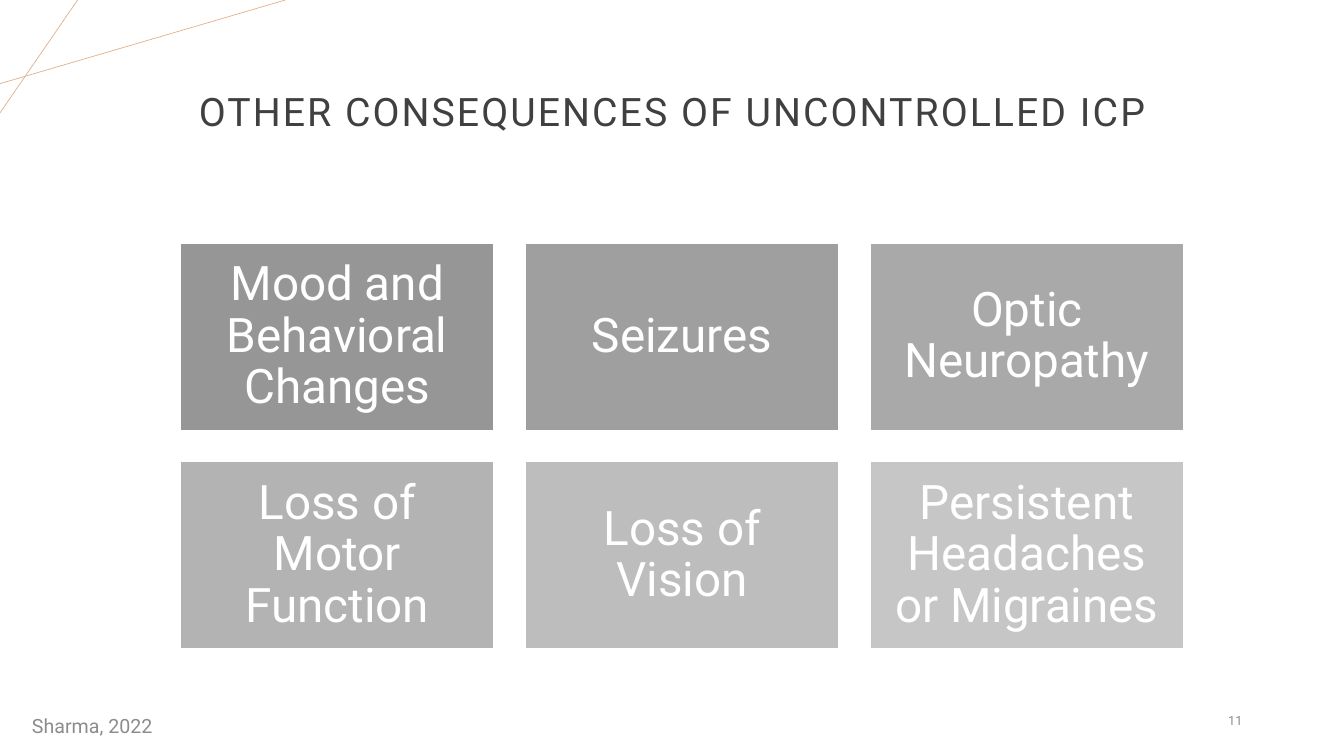
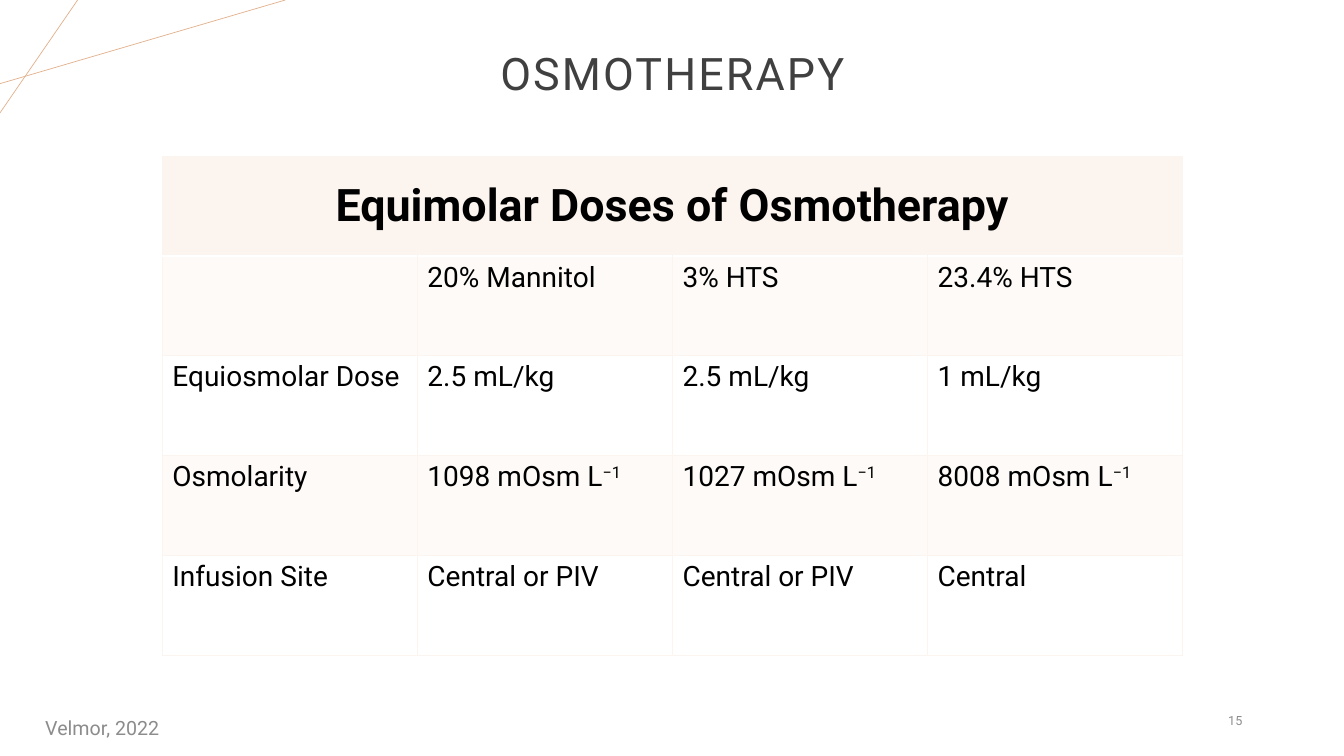
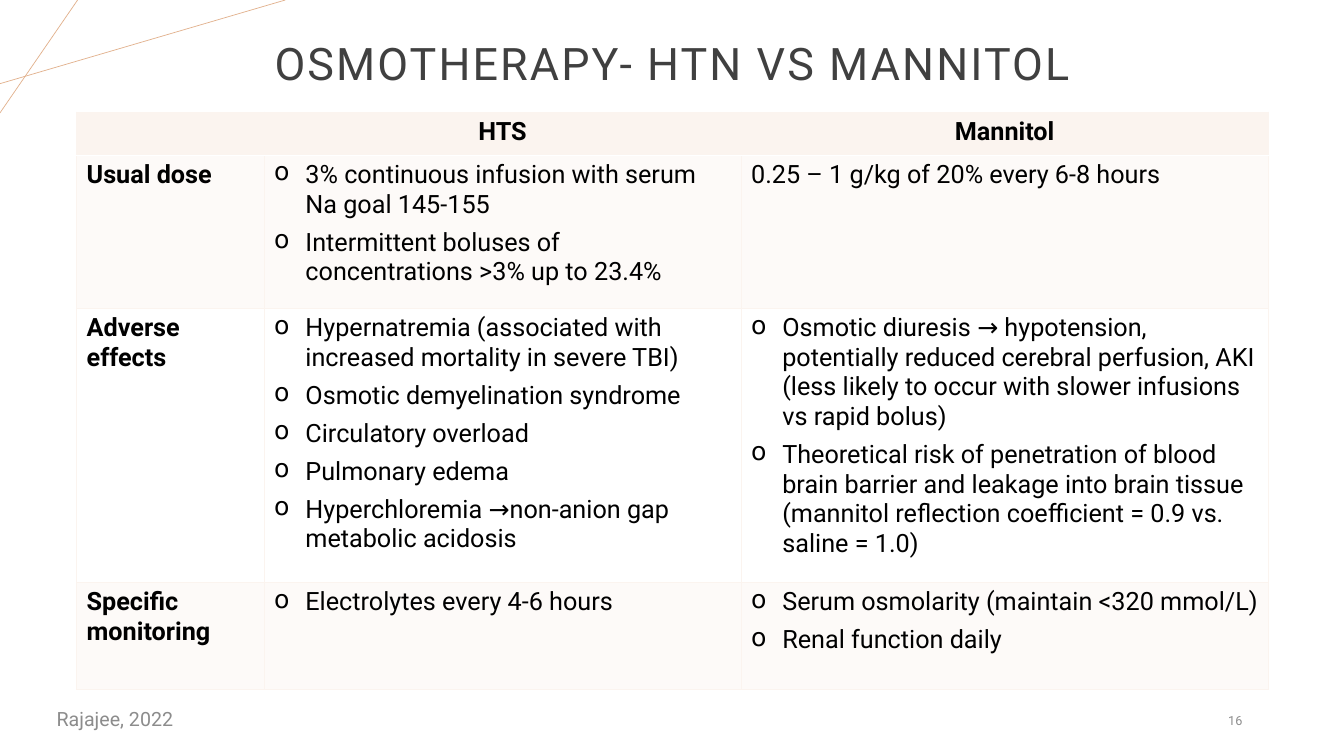
import pptx
import pptx.dml.color
import pptx.enum.shapes
import pptx.enum.text
import pptx.oxml
import pptx.oxml.ns
import pptx.util

Inches = pptx.util.Inches
ALIGN = pptx.enum.text.PP_ALIGN
ANCHOR = pptx.enum.text.MSO_ANCHOR
qn = pptx.oxml.ns.qn


def color(hex_string):
    return pptx.dml.color.RGBColor.from_string(hex_string)


def element(xml):
    namespace = pptx.oxml.ns.nsdecls("a")
    return pptx.oxml.parse_xml(xml.replace(">", f" {namespace}>", 1))


class Deck:
    FONT = "Roboto"
    WHITE, BLACK = "FFFFFF", "000000"
    TITLE, FOOTER = "404040", "8C8C8C"
    ACCENT, CREAM = "E2B18D", "FBF4EF"
    BAND_ALPHA = 40

    def __init__(self):
        self.presentation = pptx.Presentation()
        self.presentation.slide_width = Inches(13.33)
        self.presentation.slide_height = Inches(7.5)
        self.slide = None

    def new_slide(self, title, title_top, title_height, title_size, number):
        """Start a slide with the corner lines, title and page number."""
        layout = self.presentation.slide_layouts[6]
        self.slide = self.presentation.slides.add_slide(layout)
        self.line(0, 0.83, 2.83, 0)
        self.line(0.77, 0, 0, 1.12)
        heading = self.text(title, 0.92, title_top, 11.5, title_height,
                            title_size, self.TITLE, ALIGN.CENTER)
        heading.line_spacing = 0.9
        heading.runs[0]._r.get_or_add_rPr().set("spc", "150")
        self.text(number, 9.42, 6.95, 3, 0.4, 9, self.FOOTER, ALIGN.RIGHT)

    def line(self, x1, y1, x2, y2):
        connector = self.slide.shapes.add_connector(
            pptx.enum.shapes.MSO_CONNECTOR.STRAIGHT,
            Inches(x1), Inches(y1), Inches(x2), Inches(y2))
        connector.line.color.rgb = color(self.ACCENT)
        connector.line.width = pptx.util.Pt(0.5)
        connector._element.spPr.append(element("<a:effectLst></a:effectLst>"))

    def style(self, paragraph, size, hex_string, align, bold=False):
        paragraph.alignment = align
        for run in paragraph.runs:
            run.font.name = self.FONT
            run.font.size = pptx.util.Pt(size)
            run.font.bold = bold
            run.font.color.rgb = color(hex_string)

    def text(self, text, left, top, width, height, size, hex_string, align):
        box = self.slide.shapes.add_textbox(
            Inches(left), Inches(top), Inches(width), Inches(height))
        frame = box.text_frame
        frame.word_wrap = True
        frame.vertical_anchor = ANCHOR.MIDDLE
        frame.text = text
        self.style(frame.paragraphs[0], size, hex_string, align)
        return frame.paragraphs[0]

    def citation(self, text, left, top, width, height, align=ALIGN.CENTER):
        self.text(text, left, top, width, height, 14, self.FOOTER, align)

    def tile(self, text, left, top, width, height, fill):
        tile = self.slide.shapes.add_shape(
            pptx.enum.shapes.MSO_SHAPE.RECTANGLE,
            Inches(left), Inches(top), Inches(width), Inches(height))
        tile.shadow.inherit = False
        tile.fill.solid()
        tile.fill.fore_color.rgb = color(fill)
        tile.line.color.rgb = color(self.WHITE)
        tile.line.width = pptx.util.Pt(1)
        frame = tile.text_frame
        frame.word_wrap = True
        frame.vertical_anchor = ANCHOR.MIDDLE
        frame.margin_left = frame.margin_right = Inches(0.14)
        frame.margin_top = frame.margin_bottom = Inches(0.14)
        frame.text = text
        self.style(frame.paragraphs[0], 34, self.WHITE, ALIGN.CENTER)
        frame.paragraphs[0].line_spacing = 0.9

    def table(self, rows, left, top, widths, heights, size, space_after=0,
              bold_labels=False):
        """Draw a table; a list in a cell becomes bullets, ^ starts a superscript."""
        table = self.slide.shapes.add_table(
            len(heights), len(widths), Inches(left), Inches(top),
            Inches(sum(widths)), Inches(sum(heights))).table
        table.first_row = table.horz_banding = False
        for column, width in zip(table.columns, widths):
            column.width = Inches(width)
        for row, height in zip(table.rows, heights):
            row.height = Inches(height)
        for r, row in enumerate(rows):
            for c, content in enumerate(row):
                cell = table.cell(r, c)
                bold = r == 0 or (bold_labels and c == 0)
                align = ALIGN.CENTER if r == 0 else ALIGN.LEFT
                self.fill_cell(cell, content, size, align, bold, space_after)
                self.shade_cell(cell, r)
        return table

    def fill_cell(self, cell, content, size, align, bold, space_after):
        bulleted = isinstance(content, list)
        items = content if bulleted else [content]
        for i, item in enumerate(items):
            frame = cell.text_frame
            paragraph = frame.add_paragraph() if i else frame.paragraphs[0]
            base, _, superscript = item.partition("^")
            paragraph.text = base
            if superscript:
                run = paragraph.add_run()
                run.text = superscript
                run._r.get_or_add_rPr().set("baseline", "30000")
            self.style(paragraph, size, self.BLACK, align, bold)
            paragraph.space_after = pptx.util.Pt(space_after)
            if bulleted:
                properties = paragraph._p.get_or_add_pPr()
                properties.set("marL", str(Inches(0.31)))
                properties.set("indent", str(-Inches(0.31)))
                properties.append(element('<a:buChar char="o"></a:buChar>'))

    def shade_cell(self, cell, row):
        # Header solid, odd rows tinted, even rows clear
        properties = cell._tc.get_or_add_tcPr()
        if row and row % 2 == 0:
            cell.fill.background()
        else:
            cell.fill.solid()
            cell.fill.fore_color.rgb = color(self.CREAM)
        if row % 2:
            tint = properties.find(qn("a:solidFill")).find(qn("a:srgbClr"))
            tint.append(element(f'<a:alpha val="{self.BAND_ALPHA * 1000}"></a:alpha>'))
        # Cream borders, with a white rule under the header
        white_side = {0: "B", 1: "T"}.get(row)
        for i, side in enumerate("LRTB"):
            white = side == white_side
            properties.insert(i, element(
                f'<a:ln{side} w="{12700 if white else 6350}"><a:solidFill>'
                f'<a:srgbClr val="{self.WHITE if white else self.CREAM}"/>'
                f'</a:solidFill></a:ln{side}>'))


def consequences(deck):
    deck.new_slide("OTHER CONSEQUENCES OF UNCONTROLLED ICP", 0.4, 1.45, 28, "11")
    effects = [
        ("Mood and Behavioral Changes", "969696"),
        ("Seizures", "9F9F9F"),
        ("Optic Neuropathy", "A9A9A9"),
        ("Loss of Motor Function", "B3B3B3"),
        ("Loss of Vision", "BDBDBD"),
        ("Persistent Headaches or Migraines", "C6C6C6"),
    ]
    width, height, gap = 3.11, 1.86, 0.31
    for i, (effect, shade) in enumerate(effects):
        row, column = divmod(i, 3)
        deck.tile(effect, 1.79 + column * (width + gap),
                  2.41 + row * (height + gap), width, height, shade)
    deck.citation("Sharma, 2022", 0.16, 7, 1.51, 0.4)


def equimolar_doses(deck):
    deck.new_slide("OSMOTHERAPY", 0.4, 0.7, 32, "15")
    deck.citation("Velmor, 2022", 0.35, 6.9, 1.89, 0.64, ALIGN.LEFT)
    doses = deck.table([
        ["Equimolar Doses of Osmotherapy", "", "", ""],
        ["", "20% Mannitol", "3% HTS", "23.4% HTS"],
        ["Equiosmolar Dose", "2.5 mL/kg", "2.5 mL/kg", "1 mL/kg"],
        ["Osmolarity", "1098 mOsm L^−1", "1027 mOsm L^−1", "8008 mOsm L^−1"],
        ["Infusion Site", "Central or PIV", "Central or PIV", "Central"],
    ], 1.61, 1.55, [2.53] * 4, [0.99] * 5, 20)
    heading = doses.cell(0, 0)
    heading.merge(doses.cell(0, 3))
    heading.vertical_anchor = ANCHOR.MIDDLE
    deck.style(heading.text_frame.paragraphs[0], 32, deck.BLACK, ALIGN.CENTER, True)


def comparison(deck):
    deck.new_slide("OSMOTHERAPY- HTN VS MANNITOL", 0.29, 0.73, 32, "16")
    deck.table([
        ["", "HTS", "Mannitol"],
        ["Usual dose",
         ["3% continuous infusion with serum Na goal 145-155",
          "Intermittent boluses of concentrations >3% up to 23.4%"],
         "0.25 – 1 g/kg of 20% every 6-8 hours"],
        ["Adverse effects",
         ["Hypernatremia (associated with increased mortality in severe TBI)",
          "Osmotic demyelination syndrome",
          "Circulatory overload",
          "Pulmonary edema",
          "Hyperchloremia →non-anion gap metabolic acidosis"],
         ["Osmotic diuresis → hypotension, potentially reduced cerebral "
          "perfusion, AKI (less likely to occur with slower infusions vs "
          "rapid bolus)",
          "Theoretical risk of penetration of blood brain barrier and leakage "
          "into brain tissue (mannitol reflection coefficient = 0.9 vs. "
          "saline = 1.0)"]],
        ["Specific monitoring",
         ["Electrolytes every 4-6 hours"],
         ["Serum osmolarity (maintain <320 mmol/L)",
          "Renal function daily"]],
    ], 0.76, 1.11, [1.86, 4.73, 5.23], [0.43, 1.52, 2.72, 1.06], 18,
        space_after=6, bold_labels=True)
    deck.citation("Rajajee, 2022", 0.24, 6.84, 1.8, 0.58)


def main():
    deck = Deck()
    consequences(deck)
    equimolar_doses(deck)
    comparison(deck)
    deck.presentation.save("out.pptx")


if __name__ == "__main__":
    main()
